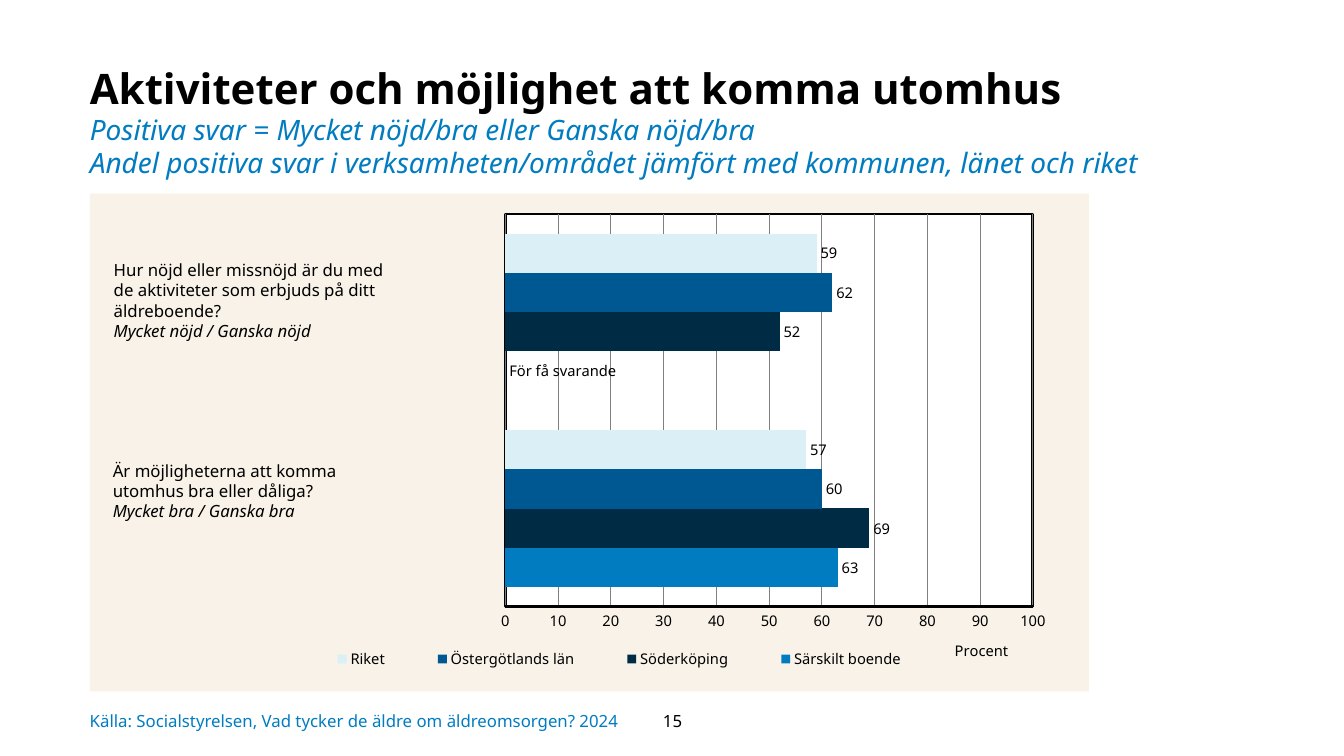
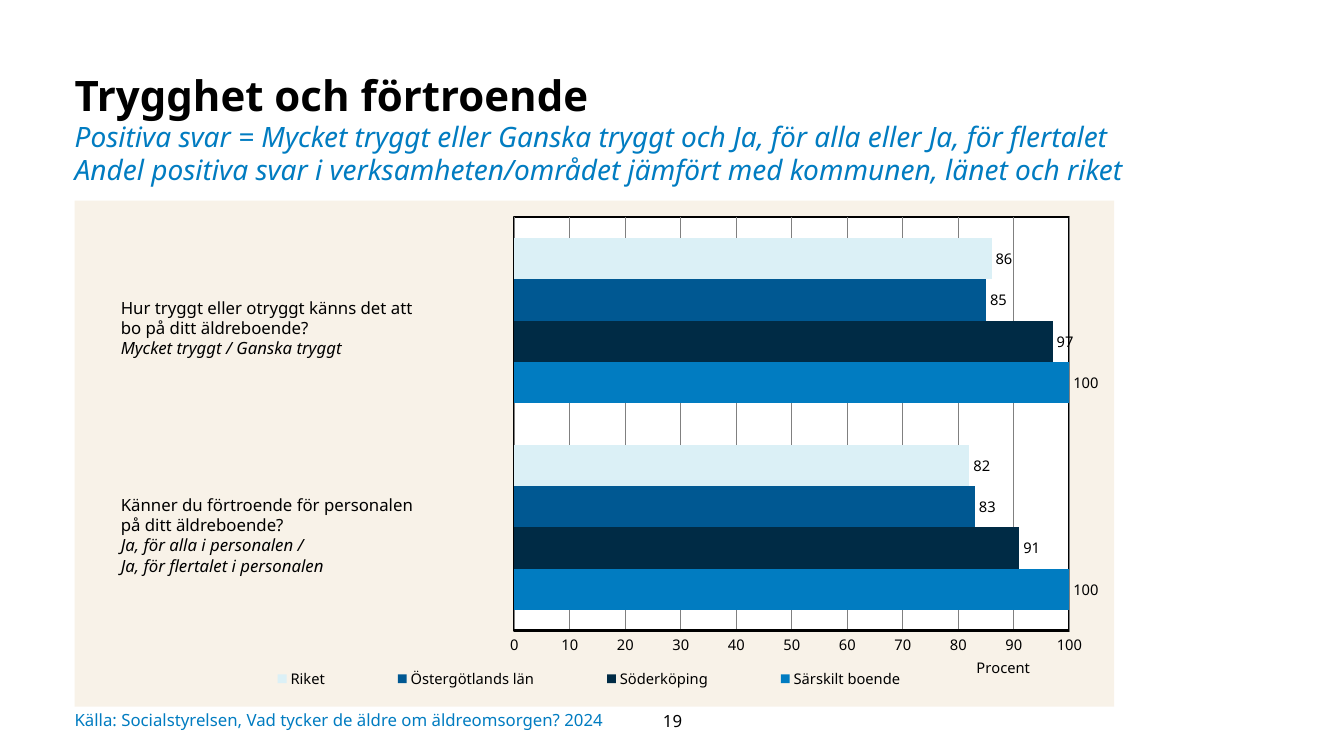
from lxml.etree import SubElement
from pptx import Presentation
from pptx.chart.data import CategoryChartData
from pptx.dml.color import RGBColor
from pptx.enum.chart import XL_CHART_TYPE, XL_LABEL_POSITION, XL_LEGEND_POSITION, XL_TICK_MARK
from pptx.enum.text import MSO_ANCHOR, MSO_AUTO_SIZE, PP_ALIGN
from pptx.oxml import parse_xml
from pptx.oxml.ns import nsdecls, qn
from pptx.util import Inches, Pt

FONT = "Noto Sans"
BLACK, BLUE, SAND, WHITE, GREY = "000000", "017CC1", "F8F2E8", "FFFFFF", "808080"
SERIES_COLORS = {
    "Särskilt boende": BLUE,
    "Söderköping": "002B45",
    "Östergötlands län": "005892",
    "Riket": "DBF0F6",
}
COMPARISON = "Andel positiva svar i verksamheten/området jämfört med kommunen, länet och riket"
SOURCE = "Källa: Socialstyrelsen, Vad tycker de äldre om äldreomsorgen? 2024"

SLIDES = [
    {
        "title": "Aktiviteter och möjlighet att komma utomhus",
        "positive": "Positiva svar = Mycket nöjd/bra eller Ganska nöjd/bra",
        "title_box": (0.89, 0.65, 10.6, 1.27),
        "chart_box": (0.89, 1.92, 9.91, 4.94),
        "plot": (0.416, 0.041, 0.528, 0.789),
        "axis_title": (0.863, 0.89),
        "legend": (0.2, 0.91, 0.66, 0.05),
        "border": 2,
        "values": [(63, 0), (69, 52), (60, 62), (57, 59)],
        "questions": [
            ((1.03, 2.53, 3, 1.09),
             "Hur nöjd eller missnöjd är du med de aktiviteter som erbjuds på ditt äldreboende?",
             ["Mycket nöjd / Ganska nöjd"]),
            ((1.02, 4.52, 3.01, 0.88),
             "Är möjligheterna att komma utomhus bra eller dåliga?",
             ["Mycket bra / Ganska bra"]),
        ],
        "source_box": (0.89, 6.95, 8.97, 0.4),
        "number": "15",
    },
    {
        "title": "Trygghet och förtroende",
        "positive": "Positiva svar = Mycket tryggt eller Ganska tryggt och Ja, för alla eller Ja, för flertalet",
        "title_box": (0.74, 0.72, 10.7, 1.27),
        "chart_box": (0.74, 1.99, 10.31, 5.02),
        "plot": (0.423, 0.033, 0.534, 0.817),
        "axis_title": (0.865, 0.894),
        "legend": (0.13, 0.92, 0.73, 0.05),
        "border": 1.5,
        "values": [(100, 100), (91, 97), (83, 85), (82, 86)],
        "questions": [
            ((1.1, 2.9, 3.1, 0.88),
             "Hur tryggt eller otryggt känns det att bo på ditt äldreboende?",
             ["Mycket tryggt / Ganska tryggt"]),
            ((1.1, 4.86, 3.26, 1.09),
             "Känner du förtroende för personalen på ditt äldreboende?",
             ["Ja, för alla i personalen /", "Ja, för flertalet i personalen"]),
        ],
        "source_box": (0.74, 7, 9.03, 0.29),
        "number": "19",
    },
]


def style(font, size, color=BLACK, bold=False, italic=False):
    font.name, font.size = FONT, Pt(size)
    font.bold, font.italic = bold, italic
    font.color.rgb = RGBColor.from_string(color)


def set_layout(parent, index, box, inner=False):
    """Place a chart part by fractions of the chart: x, y and, if given, w, h."""
    old = parent.find(qn("c:layout"))
    if old is not None:
        parent.remove(old)
    target = '<c:layoutTarget val="inner"/>' if inner else ""
    modes = '<c:xMode val="edge"/><c:yMode val="edge"/>'
    sizes = "".join(f'<c:{key} val="{value}"/>' for key, value in zip("xywh", box))
    parent.insert(index, parse_xml(
        f'<c:layout {nsdecls("c")}><c:manualLayout>{target}{modes}{sizes}</c:manualLayout></c:layout>'))


prs = Presentation()
prs.slide_width, prs.slide_height = Inches(13.33), Inches(7.5)

for content in SLIDES:
    slide = prs.slides.add_slide(prs.slide_layouts[5])

    # Title with its two explanatory lines
    title = slide.shapes.title
    title.left, title.top, title.width, title.height = map(Inches, content["title_box"])
    frame = title.text_frame
    frame.word_wrap, frame.auto_size = True, MSO_AUTO_SIZE.NONE
    frame.vertical_anchor = MSO_ANCHOR.TOP
    frame.margin_left = frame.margin_top = 0
    heading = frame.paragraphs[0]
    heading.text = "\v".join([content["title"], content["positive"], COMPARISON])
    heading.alignment, heading.line_spacing = PP_ALIGN.LEFT, 0.97
    style(heading.runs[0].font, 30, bold=True)
    for run in heading.runs[1:]:
        style(run.font, 20, BLUE, italic=True)
    for line_break in title.element.iter(qn("a:br")):
        SubElement(line_break, qn("a:rPr"), sz="1600")

    # Bar chart
    data = CategoryChartData()
    data.categories = ["1", "2"]
    for name, values in zip(SERIES_COLORS, content["values"]):
        data.add_series(name, values)
    chart = slide.shapes.add_chart(
        XL_CHART_TYPE.BAR_CLUSTERED, *map(Inches, content["chart_box"]), data).chart
    style(chart.font, 10.5)
    chart.has_title = False

    bars = chart.plots[0]
    bars.gap_width, bars.overlap, bars.vary_by_categories = 100, 0, False
    for series, color in zip(bars.series, SERIES_COLORS.values()):
        series.format.fill.solid()
        series.format.fill.fore_color.rgb = RGBColor.from_string(color)
        labels = series.data_labels
        labels.show_value, labels.position = True, XL_LABEL_POSITION.OUTSIDE_END
        style(labels.font, 10.5)
        for index, value in enumerate(series.values):
            if value == 0:
                too_few = series.points[index].data_label
                too_few.text_frame.text = "För få svarande"
                style(too_few.text_frame.paragraphs[0].runs[0].font, 10.5)
                too_few.position = XL_LABEL_POSITION.OUTSIDE_END

    chart.category_axis.visible = False
    percent = chart.value_axis
    percent.minimum_scale, percent.maximum_scale, percent.major_unit = 0, 100, 10
    percent.major_tick_mark = percent.minor_tick_mark = XL_TICK_MARK.NONE
    percent.format.line.color.rgb = RGBColor.from_string(BLACK)
    percent.format.line.width = Pt(2)
    percent.has_major_gridlines = True
    percent.major_gridlines.format.line.color.rgb = RGBColor.from_string(GREY)
    percent.major_gridlines.format.line.width = Pt(0.75)
    style(percent.tick_labels.font, 10.5)
    percent.axis_title.text_frame.text = "Procent"
    style(percent.axis_title.text_frame.paragraphs[0].runs[0].font, 10.5)

    chart.has_legend = True
    chart.legend.position = XL_LEGEND_POSITION.BOTTOM
    chart.legend.include_in_layout = False
    style(chart.legend.font, 10.5)

    chart_part = chart.element.find(qn("c:chart"))
    plot_area = chart_part.find(qn("c:plotArea"))
    set_layout(plot_area, 0, content["plot"], inner=True)
    set_layout(chart_part.find(qn("c:legend")), 1, content["legend"])
    set_layout(plot_area.find(qn("c:valAx")).find(qn("c:title")), 1, content["axis_title"])

    area = '<c:spPr {}><a:solidFill><a:srgbClr val="{}"/></a:solidFill>{}</c:spPr>'
    border = (f'<a:ln w="{Pt(content["border"])}"><a:solidFill><a:srgbClr val="{BLACK}"/>'
              '</a:solidFill></a:ln>')
    no_line = "<a:ln><a:noFill/></a:ln>"
    chart_part.addnext(parse_xml(area.format(nsdecls("c", "a"), SAND, no_line)))
    plot_area.append(parse_xml(area.format(nsdecls("c", "a"), WHITE, border)))

    # Questions beside the bars
    for box, question, answers in content["questions"]:
        frame = slide.shapes.add_textbox(*map(Inches, box)).text_frame
        frame.word_wrap = True
        frame.text = "\n".join([question, *answers])
        for index, paragraph in enumerate(frame.paragraphs):
            style(paragraph.runs[0].font, 12, italic=index > 0)

    # Source and page number
    footers = [
        (content["source_box"], SOURCE, BLUE, PP_ALIGN.LEFT),
        ((6.16, 6.95, 1.02, 0.4), content["number"], BLACK, PP_ALIGN.CENTER),
    ]
    for box, text, color, alignment in footers:
        frame = slide.shapes.add_textbox(*map(Inches, box)).text_frame
        frame.word_wrap, frame.vertical_anchor = True, MSO_ANCHOR.MIDDLE
        frame.margin_left = frame.margin_right = frame.margin_top = frame.margin_bottom = 0
        frame.text = text
        frame.paragraphs[0].alignment = alignment
        style(frame.paragraphs[0].runs[0].font, 12, color)

prs.save("out.pptx")
